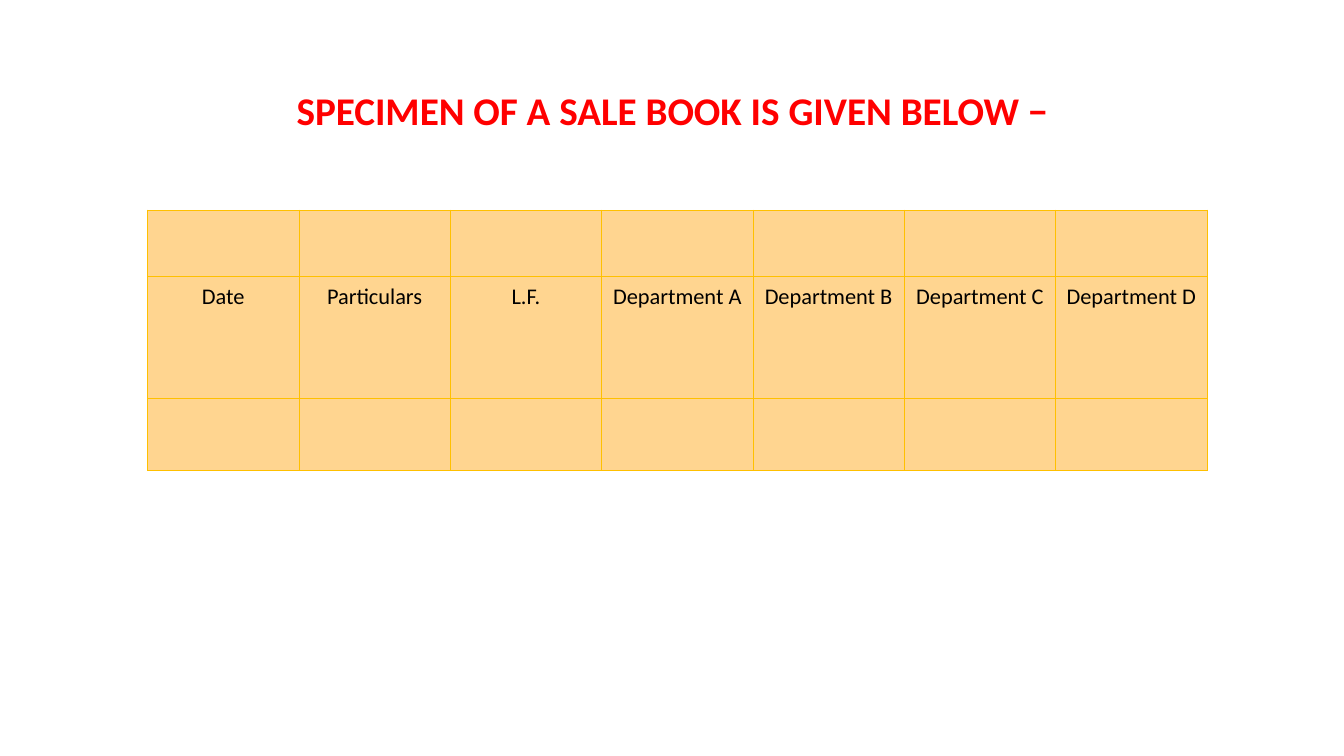
from lxml.etree import SubElement
from pptx import Presentation
from pptx.dml.color import RGBColor
from pptx.enum.text import MSO_ANCHOR, PP_ALIGN
from pptx.oxml.ns import qn
from pptx.util import Cm, Pt

HEADINGS = ["Date", "Particulars", "L.F.",
            "Department A", "Department B", "Department C", "Department D"]
ROW_HEIGHTS = [1.67, 3.07, 1.82]
HEADING_ROW = 1


def color(value):
    return RGBColor.from_string(value)


def write(frame, text, size, fill, bold=False, line_spacing=1.0):
    paragraph = frame.paragraphs[0]
    paragraph.alignment = PP_ALIGN.CENTER
    paragraph.line_spacing = line_spacing
    span = paragraph.add_run()
    span.text = text
    span.font.name = "Calibri"
    span.font.size = Pt(size)
    span.font.bold = bold
    span.font.color.rgb = color(fill)


def add_title(page, left, top, width, height):
    box = page.shapes.title
    box.left, box.top, box.width, box.height = Cm(left), Cm(top), Cm(width), Cm(height)
    frame = box.text_frame
    frame.word_wrap = True
    frame.vertical_anchor = MSO_ANCHOR.MIDDLE
    write(frame, "SPECIMEN OF A SALE BOOK IS GIVEN BELOW −", 28, "FF0000",
          bold=True, line_spacing=0.9)


def style_cell(cell, fill, border, border_width):
    properties = cell._tc.get_or_add_tcPr()
    for side in ("a:lnL", "a:lnR", "a:lnT", "a:lnB"):
        line = SubElement(properties, qn(side), w=str(Pt(border_width)))
        SubElement(SubElement(line, qn("a:solidFill")), qn("a:srgbClr"), val=border)
    cell.fill.solid()
    cell.fill.fore_color.rgb = color(fill)
    cell.margin_left = cell.margin_right = Cm(0.18)
    cell.margin_top = cell.margin_bottom = Cm(0.18)


def add_sale_book(page, left, top, width):
    table = page.shapes.add_table(len(ROW_HEIGHTS), len(HEADINGS), Cm(left), Cm(top),
                                  Cm(width), Cm(sum(ROW_HEIGHTS))).table
    table.first_row = table.horz_banding = False
    for row, height in zip(table.rows, ROW_HEIGHTS):
        row.height = Cm(height)
    for cell in table.iter_cells():
        style_cell(cell, "FFD590", "FFC000", 0.5)
    for cell, heading in zip(table.rows[HEADING_ROW].cells, HEADINGS):
        write(cell.text_frame, heading, 16, "000000")


def main():
    deck = Presentation()
    deck.slide_width, deck.slide_height = Cm(33.87), Cm(19.05)
    page = deck.slides.add_slide(deck.slide_layouts[5])
    add_title(page, 2.33, 1.01, 29.21, 3.68)
    add_sale_book(page, 3.72, 5.29, 26.7)
    deck.save("out.pptx")


if __name__ == "__main__":
    main()
